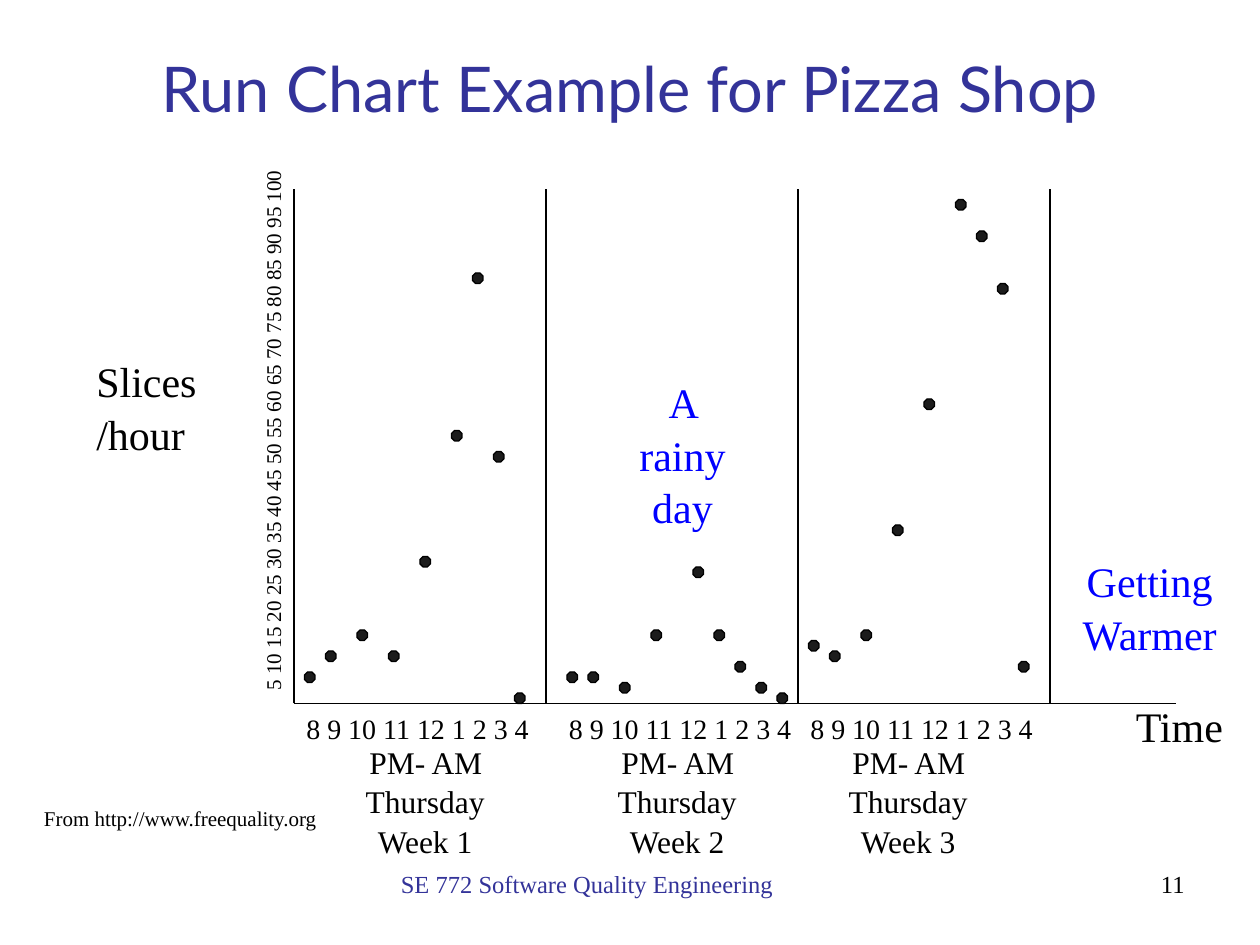
from lxml import etree
from pptx import Presentation
from pptx.dml.color import RGBColor
from pptx.enum.shapes import MSO_CONNECTOR, MSO_SHAPE
from pptx.enum.text import MSO_ANCHOR, PP_ALIGN
from pptx.oxml.ns import qn
from pptx.util import Pt

PX = 9525  # EMU in one px, 96 px to the inch
OCTAGON = MSO_SHAPE.OCTAGON
STRAIGHT = MSO_CONNECTOR.STRAIGHT
LEFT, CENTER, RIGHT = PP_ALIGN.LEFT, PP_ALIGN.CENTER, PP_ALIGN.RIGHT
TOP, BOTTOM = MSO_ANCHOR.TOP, MSO_ANCHOR.BOTTOM
SERIF = "Times New Roman"
BLACK, BLUE, INDIGO, DOT = "000000", "0000FF", "333399", "1C1C1C"


def color(hex_string):
    return RGBColor.from_string(hex_string)


def add_text(box, lines, size, ink=BLACK, align=LEFT, face=SERIF,
             anchor=TOP, wrap=True, spacing=1.05):
    label = slide.shapes.add_textbox(*[n * PX for n in box])
    frame = label.text_frame
    frame.word_wrap = wrap
    frame.vertical_anchor = anchor
    frame.text = lines
    for paragraph in frame.paragraphs:
        paragraph.alignment = align
        paragraph.line_spacing = spacing
        font = paragraph.font
        for key, value in {"name": face, "size": Pt(size)}.items():
            setattr(font, key, value)
        font.color.rgb = color(ink)
    return label


prs = Presentation()
prs.slide_width, prs.slide_height = 960 * PX, 720 * PX
slide = prs.slides.add_slide(prs.slide_layouts[6])

# Footer, page number and title
add_text((296, 656, 305, 33), "SE 772 Software Quality Engineering", 14, INDIGO, wrap=False)
add_text((688, 656, 224, 50), "11", 14, align=RIGHT)
add_text((72, 16, 816, 84), "Run Chart Example for Pizza Shop", 36, INDIGO,
         CENTER, "Lato", BOTTOM, spacing=1.0)

# Time axis, slices axis and week dividers
axis_left, axis_right, axis_top, axis_base = 224, 896, 144, 536
week_width = 192
axis_lines = [(axis_left, axis_base, axis_right, axis_base)]
for week in range(4):
    x = axis_left + week * week_width
    axis_lines.append((x, axis_base, x, axis_top))
for ends in axis_lines:
    line = slide.shapes.add_connector(STRAIGHT, *[n * PX for n in ends])
    line.line.color.rgb = color(BLACK)
    line.line.width = Pt(0.75)
    etree.SubElement(line._element.spPr, qn("a:effectLst"))

# Axis labels
scale = add_text((-13, 301, 440, 29), " ".join(str(n) for n in range(5, 101, 5)), 12)
scale.rotation = 270
add_text((64, 264, 104, 87), "Slices/hour", 24)
add_text((856, 527, 104, 49), "Time", 24)

# Each week: left edges of hours, PM-AM and day labels, then dot positions
weeks = [
    (224, 272, 208, [(232, 512), (248, 496), (272, 480), (296, 496), (320, 424),
                     (344, 328), (360, 208), (376, 344), (392, 528)]),
    (424, 464, 400, [(432, 512), (448, 512), (472, 520), (496, 480), (528, 432),
                     (544, 480), (560, 504), (576, 520), (592, 528)]),
    (608, 640, 576, [(616, 488), (632, 496), (656, 480), (680, 400), (704, 304),
                     (728, 152), (744, 176), (760, 216), (776, 504)]),
]
dot_size = 8
for number, (hours_x, period_x, day_x, dots) in enumerate(weeks, 1):
    add_text((hours_x, 536, 192, 36), "8 9 10 11 12 1 2 3 4", 16)
    add_text((period_x, 560, 120, 38), "PM- AM", 18)
    add_text((day_x, 590, 232, 68), f"Thursday\nWeek {number}", 18, align=CENTER)
    for x, y in dots:
        dot = slide.shapes.add_shape(OCTAGON, x * PX, y * PX, dot_size * PX, dot_size * PX)
        dot.shadow.inherit = False
        dot.fill.solid()
        dot.fill.fore_color.rgb = color(DOT)
        dot.line.color.rgb = color(BLACK)
        dot.line.width = Pt(0.75)

# Remarks and credit
add_text((464, 280, 112, 126), "A rainy day", 24, BLUE, CENTER)
add_text((808, 417, 136, 87), "Getting Warmer", 24, BLUE, CENTER)
add_text((24, 608, 230, 29), "From http://www.freequality.org", 12, wrap=False)

prs.save("out.pptx")
